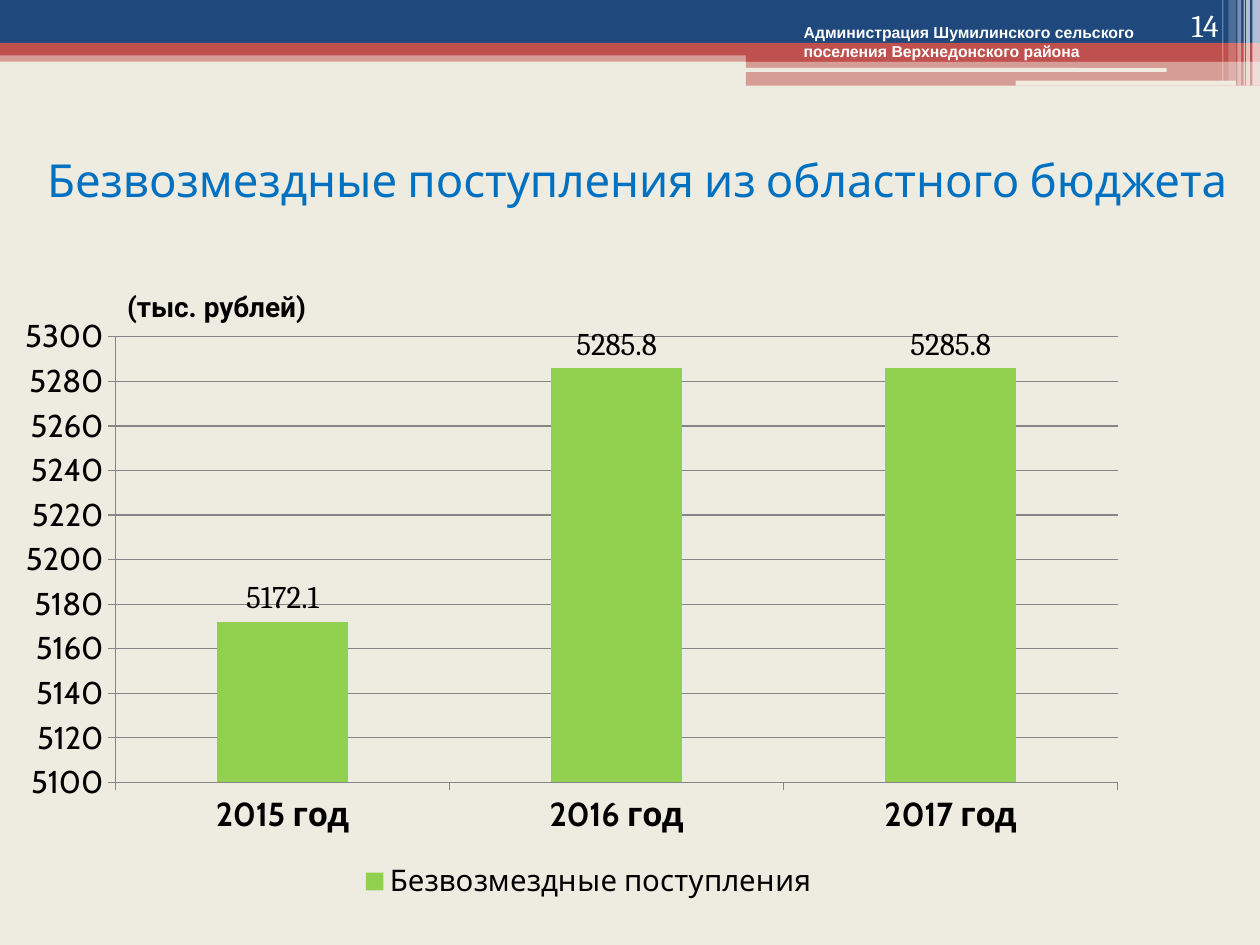
from dataclasses import dataclass

from lxml.etree import SubElement
from pptx import Presentation
from pptx.chart.data import CategoryChartData
from pptx.dml.color import RGBColor
from pptx.enum.chart import XL_CHART_TYPE, XL_LABEL_POSITION, XL_LEGEND_POSITION, XL_TICK_MARK
from pptx.enum.shapes import MSO_SHAPE
from pptx.enum.text import MSO_ANCHOR, MSO_AUTO_SIZE, PP_ALIGN
from pptx.oxml import parse_xml
from pptx.oxml.ns import nsdecls, qn
from pptx.util import Inches, Pt


@dataclass(frozen=True)
class Theme:
    paper: str = "EEECE1"
    navy: str = "1F497D"
    red: str = "C0504D"
    white: str = "FFFFFF"
    black: str = "000000"
    blue: str = "0070C0"
    green: str = "92D050"
    grid: str = "868686"
    head: str = "Cabin"
    body: str = "Cambria"
    title: int = 26
    cats: int = 19
    text: int = 18
    legend: int = 17
    unit: int = 16
    owner: int = 9


THEME = Theme()

# left, top, width, height, colour, opacity in percent
BANDS = [
    (0, 0.4, 10, 0.09, THEME.red, 50),
    (0, 0, 10, 0.34, THEME.navy, 100),
    (0, 0.34, 10, 0.1, THEME.red, 100),
    (5.92, 0.39, 4.08, 0.1, THEME.red, 100),
    (5.92, 0.48, 4.08, 0.2, THEME.red, 50),
]
SLOTS = [(5.91, 0.54, 3.35, 0.03), (8.06, 0.64, 1.75, 0.04)]
# left, width, height, opacity in percent
STRIPES = [
    (9.94, 0.06, 0.68, 65),
    (9.89, 0.03, 0.68, 65),
    (9.87, 0.01, 0.68, 60),
    (9.82, 0.03, 0.68, 40),
    (9.75, 0.06, 0.64, 20),
    (9.7, 0.01, 0.64, 30),
]


def rgb(color):
    return RGBColor.from_string(color)


def style(font, size, name, color=THEME.black, bold=False):
    font.size, font.name, font.bold = Pt(size), name, bold
    font.color.rgb = rgb(color)


def add_bar(slide, box, color, alpha=100, kind=MSO_SHAPE.RECTANGLE):
    bar = slide.shapes.add_shape(kind, *map(Inches, box))
    bar.shadow.inherit = False
    bar.line.fill.background()
    bar.fill.solid()
    bar.fill.fore_color.rgb = rgb(color)
    if alpha < 100:
        tint = bar.fill._xPr.find(".//" + qn("a:srgbClr"))
        SubElement(tint, qn("a:alpha"), val=str(alpha * 1000))


def add_header(slide):
    for *box, color, alpha in BANDS:
        add_bar(slide, box, color, alpha)
    for box in SLOTS:
        add_bar(slide, box, THEME.paper, kind=MSO_SHAPE.ROUNDED_RECTANGLE)
    for left, width, height, alpha in STRIPES:
        add_bar(slide, (left, 0, width, height), THEME.white, alpha)


def put_text(shape, text, size, name, color, bold=False,
             align=PP_ALIGN.LEFT, anchor=MSO_ANCHOR.TOP):
    frame = shape.text_frame
    frame.text = text
    frame.word_wrap = True
    frame.auto_size = MSO_AUTO_SIZE.NONE
    frame.vertical_anchor = anchor
    line = frame.paragraphs[0]
    line.alignment = align
    style(line.font, size, name, color, bold)


def add_title(slide, text):
    title = slide.shapes.title
    title.left, title.top, title.width, title.height = map(Inches, (0.12, 0.84, 9.88, 1.17))
    put_text(title, text, THEME.title, THEME.head, THEME.blue,
             align=PP_ALIGN.CENTER, anchor=MSO_ANCHOR.MIDDLE)


def add_label(slide, box, *args, **kwargs):
    put_text(slide.shapes.add_textbox(*map(Inches, box)), *args, **kwargs)


def place_plot(chart, x, y, w, h):
    """Fix the inner plot area, in fractions of the chart."""
    area = chart._chartSpace.chart.plotArea
    for old in area.findall(qn("c:layout")):
        area.remove(old)
    sizes = "".join(f'<c:{key} val="{val}"/>' for key, val in zip("xywh", (x, y, w, h)))
    area.insert(0, parse_xml(
        f'<c:layout {nsdecls("c")}><c:manualLayout><c:layoutTarget val="inner"/>'
        f'<c:xMode val="edge"/><c:yMode val="edge"/>{sizes}</c:manualLayout></c:layout>'))


def style_axes(chart):
    cats, vals = chart.category_axis, chart.value_axis
    for axis, size in ((cats, THEME.cats), (vals, THEME.text)):
        style(axis.tick_labels.font, size, THEME.head, bold=axis is cats)
        axis.major_tick_mark = XL_TICK_MARK.OUTSIDE
        axis.format.line.color.rgb = rgb(THEME.grid)
    vals.minimum_scale, vals.maximum_scale, vals.major_unit = 5100, 5300, 20
    vals.has_major_gridlines = True
    vals.major_gridlines.format.line.color.rgb = rgb(THEME.grid)


def add_income(slide):
    data = CategoryChartData()
    data.categories = ["2015 год", "2016 год", "2017 год"]
    data.add_series("Безвозмездные поступления", (5172.1, 5285.8, 5285.8))
    box = map(Inches, (0.2, 2.46, 8.82, 4.73))
    chart = slide.shapes.add_chart(XL_CHART_TYPE.COLUMN_CLUSTERED, *box, data).chart
    style(chart.font, THEME.text, THEME.body)
    chart.has_title = False
    chart.has_legend = True
    chart.legend.position = XL_LEGEND_POSITION.BOTTOM
    chart.legend.include_in_layout = False
    style(chart.legend.font, THEME.legend, THEME.head)
    style_axes(chart)

    plot = chart.plots[0]
    plot.gap_width = 155
    plot.vary_by_categories = False
    fill = plot.series[0].format.fill
    fill.solid()
    fill.fore_color.rgb = rgb(THEME.green)
    labels = plot.series[0].data_labels
    labels.show_value = True
    labels.position = XL_LABEL_POSITION.OUTSIDE_END
    style(labels.font, THEME.text, THEME.body)
    place_plot(chart, 0.068, 0.045, 0.915, 0.748)


def main():
    deck = Presentation()
    deck.slide_width, deck.slide_height = Inches(10), Inches(7.5)
    slide = deck.slides.add_slide(deck.slide_layouts[5])
    slide.background.fill.solid()
    slide.background.fill.fore_color.rgb = rgb(THEME.paper)
    add_header(slide)
    add_title(slide, "Безвозмездные поступления из областного бюджета")
    add_label(slide, (0.91, 2.25, 1.81, 0.37), "(тыс. рублей)",
              THEME.unit, "Roboto", THEME.black, bold=True)
    add_label(slide, (6.28, 0.13, 3.11, 0.4),
              "Администрация Шумилинского сельского поселения Верхнедонского района",
              THEME.owner, "Arial", THEME.white, bold=True)
    add_income(slide)
    add_label(slide, (8.94, 0, 0.83, 0.4), "14", THEME.text, THEME.body, THEME.white,
              align=PP_ALIGN.RIGHT, anchor=MSO_ANCHOR.BOTTOM)
    deck.save("out.pptx")


if __name__ == "__main__":
    main()
